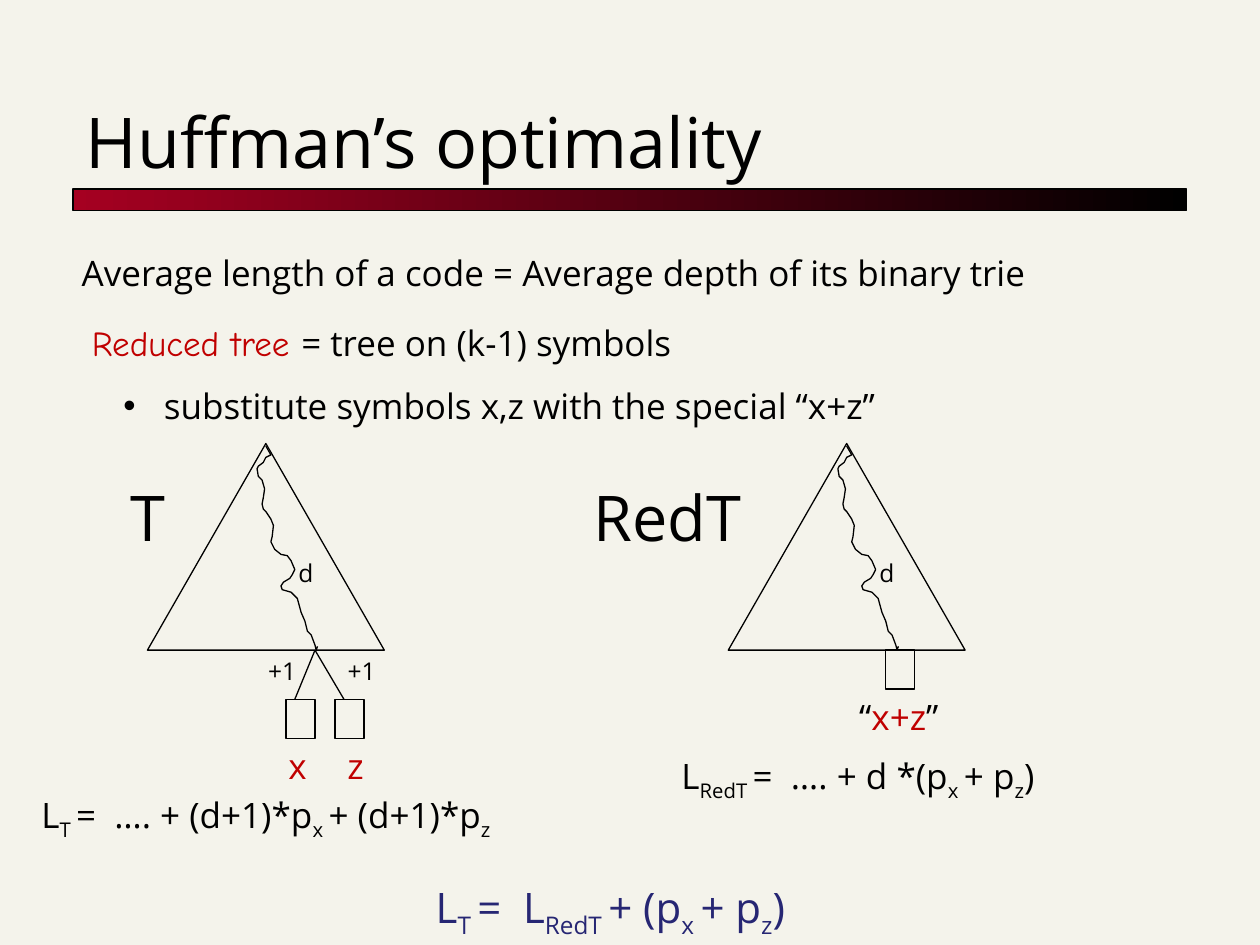
from dataclasses import dataclass

from lxml import etree
from pptx import Presentation
from pptx.dml.color import RGBColor
from pptx.enum.shapes import MSO_CONNECTOR, MSO_SHAPE
from pptx.enum.text import MSO_ANCHOR, MSO_AUTO_SIZE, PP_ALIGN
from pptx.oxml.ns import qn
from pptx.util import Inches, Pt

RECT, TRIANGLE = MSO_SHAPE.RECTANGLE, MSO_SHAPE.ISOSCELES_TRIANGLE
STRAIGHT = MSO_CONNECTOR.STRAIGHT
BOTTOM, LEFT = MSO_ANCHOR.BOTTOM, PP_ALIGN.LEFT
GROW, FIXED = MSO_AUTO_SIZE.SHAPE_TO_FIT_TEXT, MSO_AUTO_SIZE.NONE

# The slide is a grid of 1000 columns by 750 rows.
CELL = Inches(0.01)
COLS, ROWS = 1000, 750


@dataclass(frozen=True)
class Theme:
    paper: str = "F4F3EB"
    ink: str = "000000"
    red: str = "C00000"
    bar: str = "A50021"
    blue: str = "262673"
    face: str = "Open Sans"
    hand: str = "Comic Neue"
    small: int = 14
    body: int = 20
    sum: int = 24
    label: int = 36
    title: int = 40
    line: float = 0.75


THEME = Theme()

# Winding way from root to leaf, in cells from the triangle's corner.
TRAIL = [
    (94, 2), (98, 9), (94, 11), (92, 15), (88, 18), (87, 20), (88, 26),
    (91, 29), (93, 36), (92, 43), (91, 48), (92, 52), (94, 54), (98, 60),
    (100, 65), (99, 74), (98, 78), (101, 84), (106, 88), (111, 89),
    (114, 93), (117, 100), (115, 104), (113, 107), (108, 110), (106, 113),
    (107, 116), (114, 118), (119, 123), (122, 134), (125, 141), (127, 149),
    (130, 152), (133, 160), (134, 164), (135, 161),
]
TREE_W, TREE_H, TREE_TOP = 188, 164, 352
BASE = TREE_TOP + TREE_H
LEAF_W, LEAF_H = 23, 31


def grid(*cells):
    return [round(cell * CELL) for cell in cells]


def tint(text):
    return RGBColor.from_string(text)


def add_run(par, text, size=THEME.body, color=THEME.ink, face=THEME.face, sub=False):
    run = par.add_run()
    run.text = text
    font = run.font
    font.size, font.name = Pt(size), face
    font.color.rgb = tint(color)
    if sub:
        run._r.get_or_add_rPr().set("baseline", "-25000")


def add_box(shapes, place, wrap=False):
    """Add an empty text box and return its text frame."""
    frame = shapes.add_textbox(*grid(*place)).text_frame
    frame.word_wrap = wrap
    frame.auto_size = GROW
    return frame


def add_text(shapes, place, text, **style):
    add_run(add_box(shapes, place).paragraphs[0], text, **style)


def add_sum(shapes, place, parts, space=None, **style):
    """Add a formula whose parts are plain and subscript by turns."""
    par = add_box(shapes, place, wrap=True).paragraphs[0]
    par.line_spacing = space
    for index, part in enumerate(parts):
        add_run(par, part, sub=index % 2 == 1, **style)


def draw_line(shape):
    shape.line.color.rgb = tint(THEME.ink)
    shape.line.width = Pt(THEME.line)


def add_form(shapes, kind, place):
    shape = shapes.add_shape(kind, *grid(*place))
    shape.shadow.inherit = False
    shape.fill.background()
    draw_line(shape)
    return shape


def add_edge(shapes, start, end):
    edge = shapes.add_connector(STRAIGHT, *grid(*start, *end))
    draw_line(edge)
    etree.SubElement(edge._element.spPr, qn("a:effectLst"))


def add_trail(shapes, left):
    points = [(left + x, TREE_TOP + y) for x, y in TRAIL]
    pen = shapes.build_freeform(*points[0], scale=CELL)
    pen.add_line_segments(points[1:], close=False)
    trail = pen.convert_to_shape()
    trail.shadow.inherit = False
    trail.fill.background()
    draw_line(trail)


def add_leaf(shapes, left, top):
    add_form(shapes, RECT, (left, top, LEAF_W, LEAF_H))


def add_tree(slide, left, name, spot, width):
    """Add a grouped tree with its name, and return the group's shapes."""
    shapes = slide.shapes.add_group_shape().shapes
    add_form(shapes, TRIANGLE, (left, TREE_TOP, TREE_W, TREE_H))
    add_trail(shapes, left)
    add_text(shapes, (left + 110, 438, 32, 34), "d", size=THEME.small)
    add_text(shapes, (spot, 375, width, 71), name, size=THEME.label)
    return shapes


def add_head(slide):
    bar = add_form(slide.shapes, RECT, (58, 150, 884, 17))
    bar.fill.gradient()
    bar.fill.gradient_angle = 0
    for stop, color, spot in zip(bar.fill.gradient_stops, (THEME.bar, THEME.ink), (0, 1)):
        stop.color.rgb, stop.position = tint(color), spot

    title = slide.shapes.title
    title.left, title.top, title.width, title.height = grid(58, 42, 883, 108)
    frame = title.text_frame
    frame.vertical_anchor, frame.auto_size = BOTTOM, FIXED
    par = frame.paragraphs[0]
    par.alignment = LEFT
    add_run(par, "Huffman’s optimality", size=THEME.title)


def add_intro(shapes):
    add_text(shapes, (55, 195, 819, 44),
             "Average length of a code = Average depth of its binary trie")
    frame = add_box(shapes, (63, 250, 698, 94))
    par = frame.paragraphs[0]
    add_run(par, "Reduced tree ", color=THEME.red, face=THEME.hand)
    add_run(par, "= tree on (k-1) symbols")
    par = frame.add_paragraph()
    par.level, par.line_spacing = 1, 1.5
    props = par._p.get_or_add_pPr()
    props.set("marL", str(Inches(0.5)))
    props.set("indent", str(-Inches(0.25)))
    etree.SubElement(props, qn("a:buFont")).set("typeface", "Arial")
    etree.SubElement(props, qn("a:buChar")).set("char", "•")
    add_run(par, " substitute symbols x,z with the special “x+z”")


def add_full(slide):
    tree = add_tree(slide, 117, "T", 94, 52)
    for name, leaf, foot, spot in (("x", 227, 234, 219), ("z", 266, 273, 266)):
        add_edge(tree, (250, BASE), (foot, 555))
        add_leaf(tree, leaf, 555)
        add_text(tree, (spot, 586, 37, 44), name, color=THEME.red)
    for left in (203, 266):
        add_text(slide.shapes, (left, BASE, 45, 34), "+1", size=THEME.small)
    add_sum(slide.shapes, (23, 625, 453, 44),
            ["L", "T ", "=  …. + (d+1)*p", "x ", "+ (d+1)*p", "z"])


def add_reduced(slide):
    tree = add_tree(slide, 578, "RedT", 461, 144)
    add_leaf(tree, 703, BASE)
    par = add_box(slide.shapes, (672, 547, 92, 44)).paragraphs[0]
    for text, color in (("“", THEME.ink), ("x+z", THEME.red), ("”", THEME.ink)):
        add_run(par, text, color=color)
    add_sum(slide.shapes, (531, 594, 375, 44),
            ["L", "RedT ", "=  …. + d *(p", "x ", "+ p", "z", ")"])


def main():
    deck = Presentation()
    deck.slide_width, deck.slide_height = grid(COLS, ROWS)
    slide = deck.slides.add_slide(deck.slide_layouts[5])
    slide.background.fill.solid()
    slide.background.fill.fore_color.rgb = tint(THEME.paper)
    add_head(slide)
    add_intro(slide.shapes)
    add_full(slide)
    add_reduced(slide)
    add_sum(slide.shapes, (336, 672, 359, 71),
            ["L", "T ", "=  L", "RedT ", "+ (p", "x ", "+ p", "z", ")"],
            space=1.5, size=THEME.sum, color=THEME.blue)
    deck.save("out.pptx")


if __name__ == "__main__":
    main()
